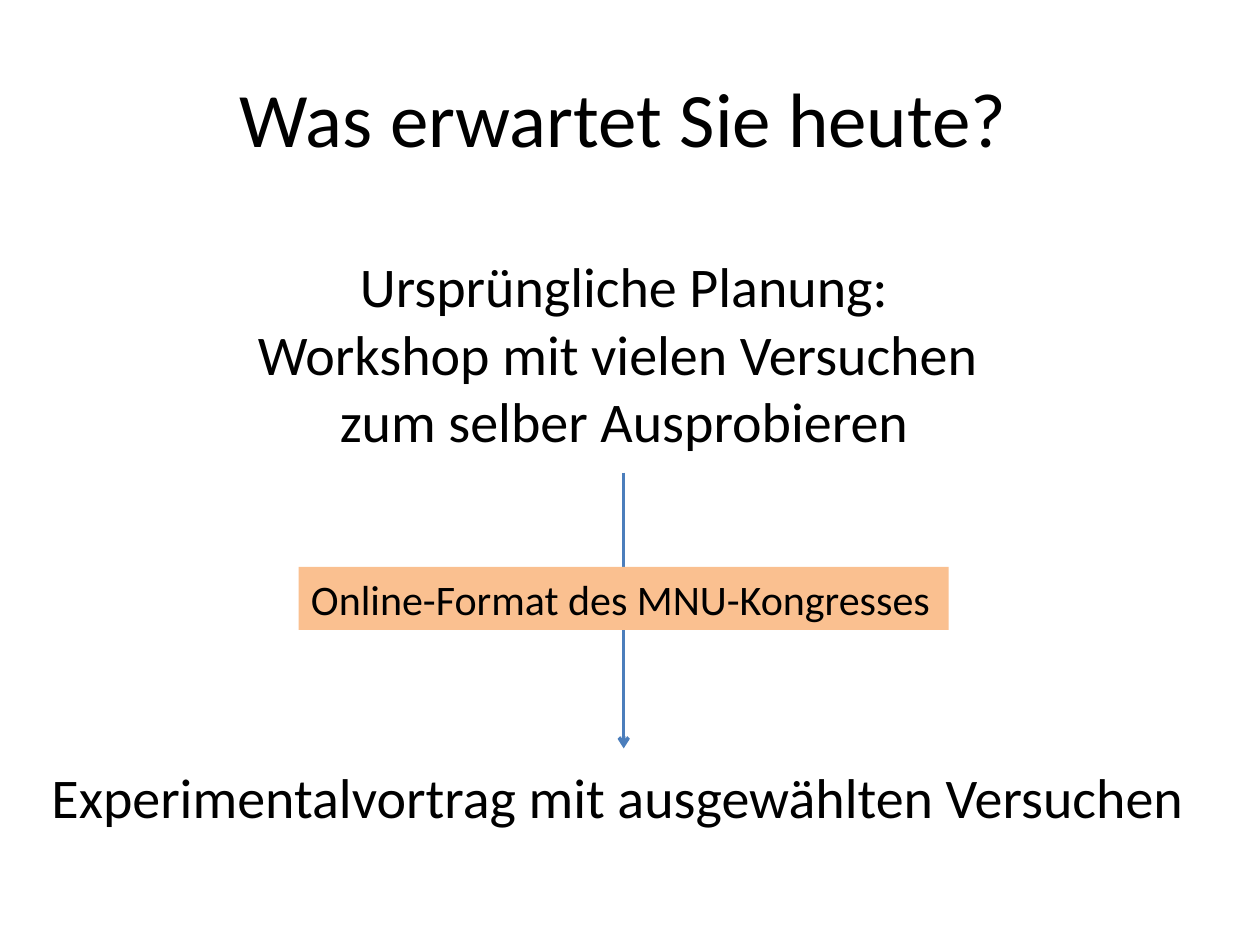
from dataclasses import dataclass

from lxml import etree
from pptx import Presentation
from pptx.dml.color import RGBColor
from pptx.enum.shapes import MSO_CONNECTOR
from pptx.enum.text import MSO_ANCHOR, PP_ALIGN
from pptx.oxml.ns import qn
from pptx.util import Inches, Pt

LEFT, CENTER = PP_ALIGN.LEFT, PP_ALIGN.CENTER
TOP, MIDDLE = MSO_ANCHOR.TOP, MSO_ANCHOR.MIDDLE
STRAIGHT = MSO_CONNECTOR.STRAIGHT


@dataclass(frozen=True)
class Theme:
    font: str = "Calibri"
    text: RGBColor = RGBColor(0x00, 0x00, 0x00)
    arrow: RGBColor = RGBColor(0x4B, 0x7E, 0xBC)
    highlight: RGBColor = RGBColor(0xFA, 0xC0, 0x90)
    title_size: int = 44
    body_size: int = 32
    label_size: int = 24


theme = Theme()


def write_text(box, text, size=theme.body_size, align=LEFT, anchor=TOP, wrap=False):
    frame = box.text_frame
    frame.text = text
    frame.word_wrap = wrap
    frame.vertical_anchor = anchor
    for para in frame.paragraphs:
        para.alignment = align
        for span in para.runs:
            span.font.name = theme.font
            span.font.size = Pt(size)
            span.font.color.rgb = theme.text


deck = Presentation()
deck.slide_width, deck.slide_height = Inches(10), Inches(7.5)
page = deck.slides.add_slide(deck.slide_layouts[5])

title = page.shapes.title
title.left, title.top = Inches(0.45), Inches(0.3)
title.width, title.height = Inches(9), Inches(1.25)
write_text(title, "Was erwartet Sie heute?", size=theme.title_size,
           align=CENTER, anchor=MIDDLE, wrap=True)

plan = page.shapes.add_textbox(Inches(1.92), Inches(1.95), Inches(6.07), Inches(1.72))
write_text(plan, "Ursprüngliche Planung:\nWorkshop mit vielen Versuchen \nzum selber Ausprobieren",
           align=CENTER)

outcome = page.shapes.add_textbox(Inches(0.31), Inches(6), Inches(9.28), Inches(0.64))
write_text(outcome, "Experimentalvortrag mit ausgewählten Versuchen")

arrow = page.shapes.add_connector(STRAIGHT, Inches(4.95), Inches(3.75), Inches(4.95), Inches(5.94))
arrow.line.color.rgb = theme.arrow
arrow.line.width = Pt(2)
etree.SubElement(arrow.line._get_or_add_ln(), qn("a:tailEnd"), type="arrow")
etree.SubElement(arrow._element.spPr, qn("a:effectLst"))

reason = page.shapes.add_textbox(Inches(2.37), Inches(4.5), Inches(5.16), Inches(0.5))
reason.fill.solid()
reason.fill.fore_color.rgb = theme.highlight
write_text(reason, "Online-Format des MNU-Kongresses", size=theme.label_size)

deck.save("out.pptx")
